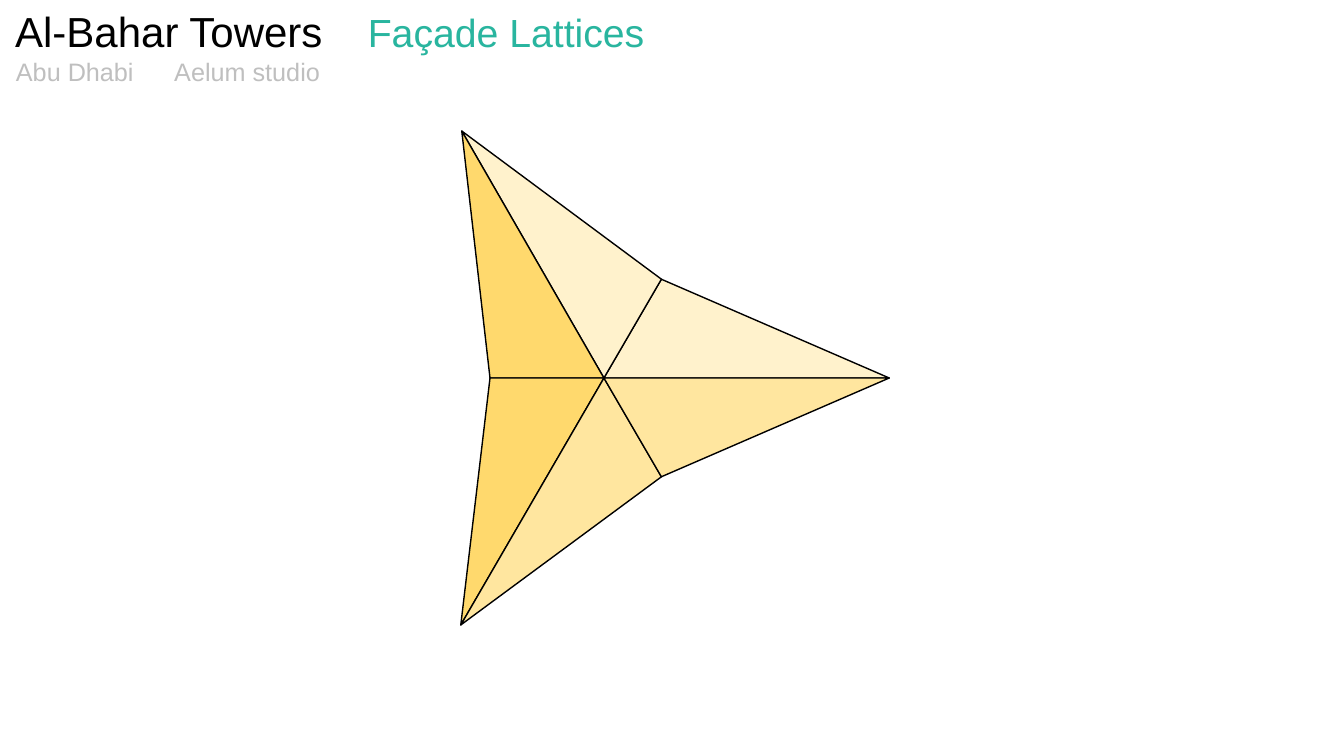
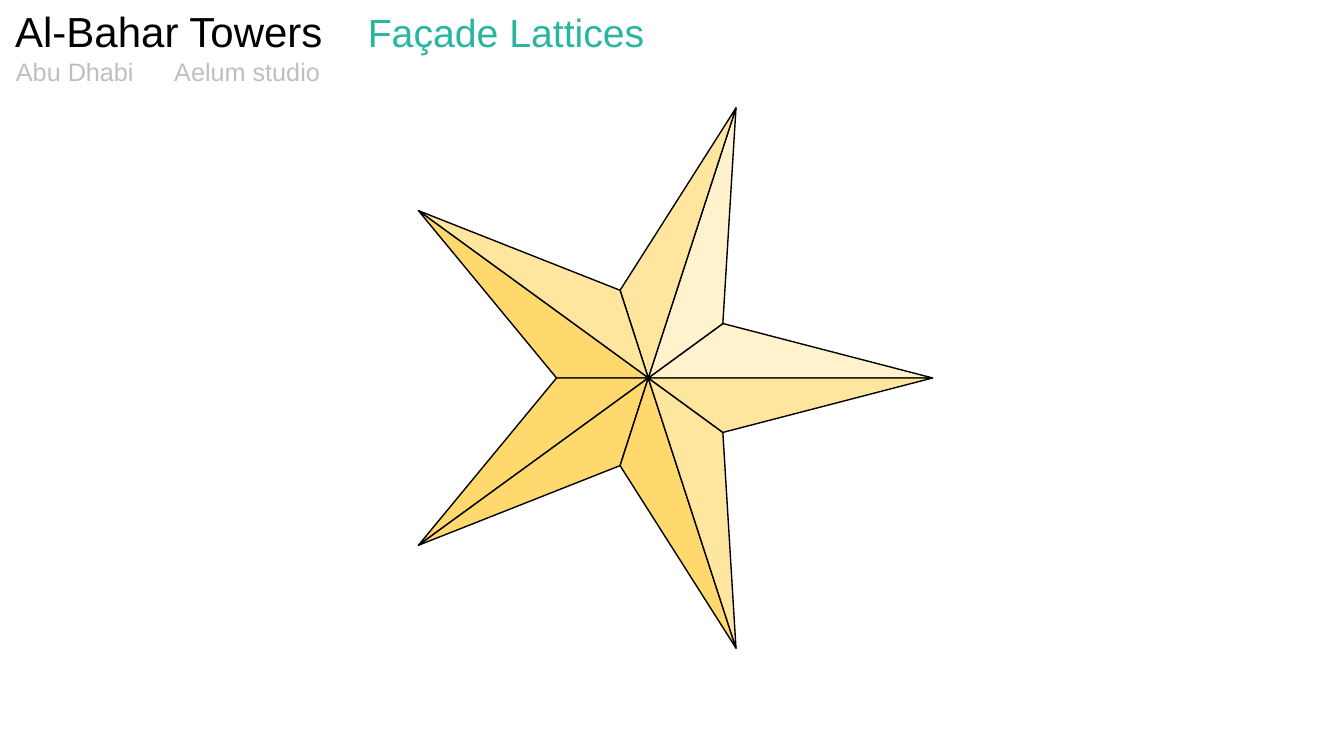
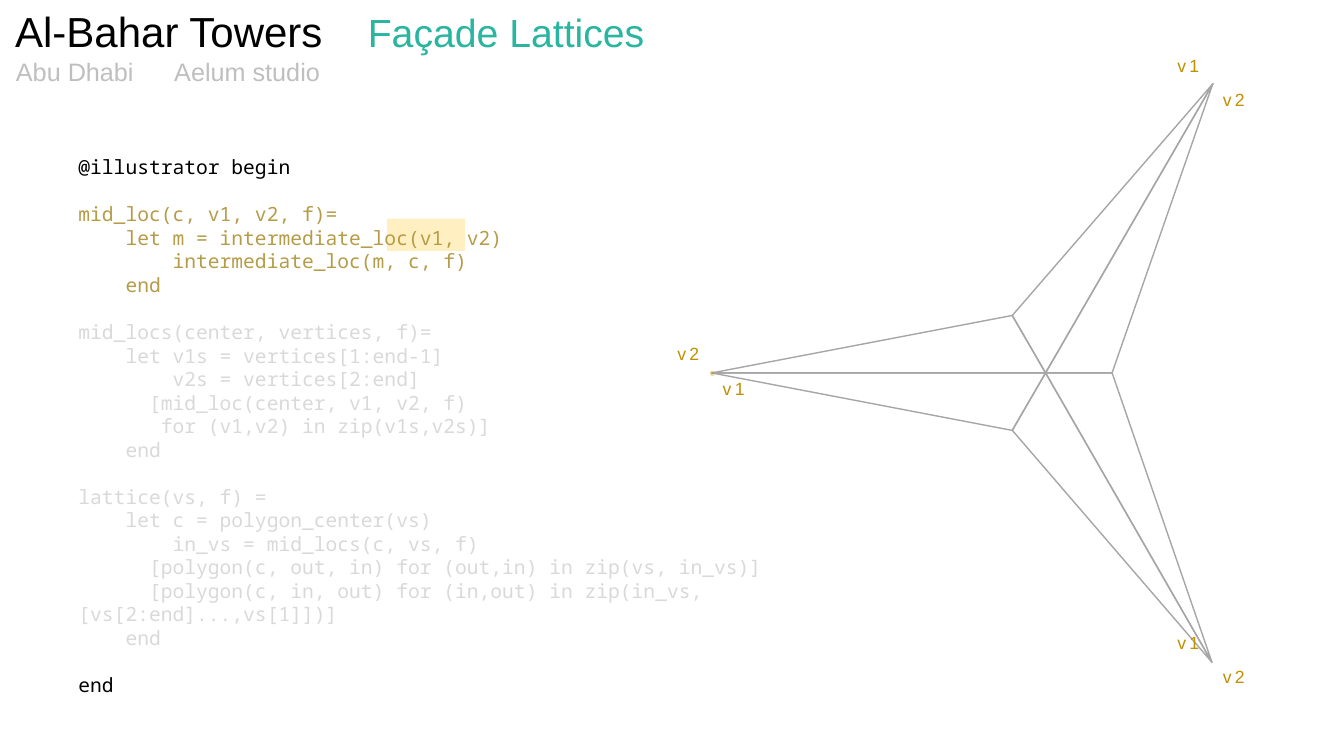
from math import cos, pi, sin

from lxml import etree
from pptx import Presentation
from pptx.dml.color import RGBColor
from pptx.enum.shapes import MSO_SHAPE
from pptx.enum.text import MSO_ANCHOR, MSO_AUTO_SIZE, PP_ALIGN
from pptx.oxml.ns import qn
from pptx.util import Pt

RECT, OVAL = MSO_SHAPE.RECTANGLE, MSO_SHAPE.OVAL
TOP, FIXED = MSO_ANCHOR.TOP, MSO_AUTO_SIZE.NONE
LEFT, RIGHT = PP_ALIGN.LEFT, PP_ALIGN.RIGHT

SCALE = 9144
PITCH = Pt(16.8)
COLORS = {
    "black": "000000", "teal": "29B59F", "gray": "BFBFBF",
    "light": "FFF2CC", "mid": "FFE69F", "dark": "FFD96D",
    "wire": "A6A6A6", "gold": "BF9000", "mark": "FFD966",
    "ochre": "B59C48", "pale": "D9D9D9",
}
STYLES = {
    "title": {"name": "Arial", "size": Pt(30)},
    "topic": {"name": "Arial", "size": Pt(28)},
    "sub": {"name": "Arial", "size": Pt(18)},
    "label": {"name": "Arial", "size": Pt(12.6)},
    "code": {"name": "Noto Sans Mono", "size": Pt(14)},
}
CODE = """@illustrator begin

mid_loc(c, v1, v2, f)=
    let m = intermediate_loc(v1, v2)
        intermediate_loc(m, c, f)
    end

mid_locs(center, vertices, f)=
    let v1s = vertices[1:end-1]
        v2s = vertices[2:end]
      [mid_loc(center, v1, v2, f)
       for (v1,v2) in zip(v1s,v2s)]
    end

lattice(vs, f) =
    let c = polygon_center(vs)
        in_vs = mid_locs(c, vs, f)
      [polygon(c, out, in) for (out,in) in zip(vs, in_vs)]
      [polygon(c, in, out) for (in,out) in zip(in_vs, [vs[2:end]...,vs[1]])]
    end

end"""
TINTS = ["black", "ochre", "pale", "pale", "black"]
LABELS = [
    ("v2", 1203, 656), ("v2", 1203, 83), ("v1", 707, 370),
    ("v2", 662, 335), ("v1", 1158, 49), ("v1", 1158, 622),
]


def rgb(name):
    return RGBColor.from_string(COLORS[name])


class Deck:
    def __init__(self):
        self.prs = Presentation()
        self.prs.slide_width = 1333 * SCALE
        self.prs.slide_height = 750 * SCALE

    def page(self):
        self.slide = self.prs.slides.add_slide(self.prs.slide_layouts[5])
        title = self.slide.shapes.title
        for side, size in zip(("left", "top", "width", "height"), (1, 0, 329, 61)):
            setattr(title, side, size * SCALE)
        self.fill(title, "Al-Bahar Towers", "title", "black", RIGHT)
        self.text("Façade Lattices", (355, 3, 372, 57), "topic", "teal")
        self.text("Aelum studio", (163, 51, 214, 40), "sub", "gray")
        self.text("Abu Dhabi", (6, 51, 158, 40), "sub", "gray")

    def run(self, para, text, style, color):
        run = para.add_run()
        run.text = text
        for key, value in STYLES[style].items():
            setattr(run.font, key, value)
        run.font.color.rgb = rgb(color)
        return run

    def frame(self, shape):
        frame = shape.text_frame
        form = {"word_wrap": True, "auto_size": FIXED, "vertical_anchor": TOP}
        for key, value in form.items():
            setattr(frame, key, value)
        return frame

    def fill(self, shape, text, style, color, align=LEFT):
        para = self.frame(shape).paragraphs[0]
        para.alignment = align
        return self.run(para, text, style, color)

    def box(self, place):
        return self.slide.shapes.add_textbox(*(n * SCALE for n in place))

    def text(self, text, place, style, color):
        return self.fill(self.box(place), text, style, color)

    def label(self, text, left, top):
        run = self.text(text, (left, top, 50, 31), "label", "gold")
        run.font._element.set("spc", "230")

    def code(self, text, tints, place):
        frame = self.frame(self.box(place))
        para = frame.paragraphs[0]
        for part, (block, tint) in enumerate(zip(text.split("\n\n"), tints)):
            for row, line in enumerate(block.split("\n")):
                if part or row:
                    para = frame.add_paragraph()
                    para.space_before = 0 if row else PITCH
                para.line_spacing = PITCH
                self.run(para, line, "code", tint)

    def shade(self, kind, place, color, alpha):
        shape = self.slide.shapes.add_shape(kind, *(n * SCALE for n in place))
        shape.shadow.inherit = False
        shape.fill.solid()
        shape.fill.fore_color.rgb = rgb(color)
        shape.line.fill.background()
        tone = shape._element.spPr.find(".//" + qn("a:srgbClr"))
        etree.SubElement(tone, qn("a:alpha"), val=str(alpha * 1000))

    def facet(self, points, fill, line):
        outline = self.slide.shapes.build_freeform(*points[0], scale=SCALE)
        outline.add_line_segments(points[1:], close=True)
        shape = outline.convert_to_shape()
        shape.shadow.inherit = False
        if fill:
            shape.fill.solid()
            shape.fill.fore_color.rgb = rgb(fill)
        else:
            shape.fill.background()
        shape.line.color.rgb = rgb(line)
        shape.line.width = Pt(1)

    def star(self, hub, reach, arms, depth, fills, line="black", turn=0):
        inner = depth * reach * cos(pi / arms)
        rim = []
        for step in range(2 * arms):
            size = inner if step % 2 else reach
            angle = turn + step * pi / arms
            rim.append((round(hub[0] + size * cos(angle)),
                        round(hub[1] - size * sin(angle))))
        for start, end, fill in zip(rim, rim[1:] + rim[:1], fills):
            self.facet([hub, start, end], fill, line)


def main():
    deck = Deck()
    light, mid, dark = ["light"] * 2, ["mid"] * 2, ["dark"] * 2

    deck.page()
    deck.star((599, 375), 283, 3, 0.8, light + dark + mid)

    deck.page()
    deck.star((643, 375), 282, 5, 0.4, light + mid + dark + dark + mid)

    deck.page()
    deck.shade(RECT, (384, 217, 77, 32), "mark", 40)
    deck.star((1037, 370), 331, 3, 0.4, [None] * 6, "wire", pi)
    deck.shade(OVAL, (704, 368, 5, 5), "gold", 33)
    for label in LABELS:
        deck.label(*label)
    deck.code(CODE, TINTS, (68, 149, 866, 528))

    deck.prs.save("out.pptx")


if __name__ == "__main__":
    main()
